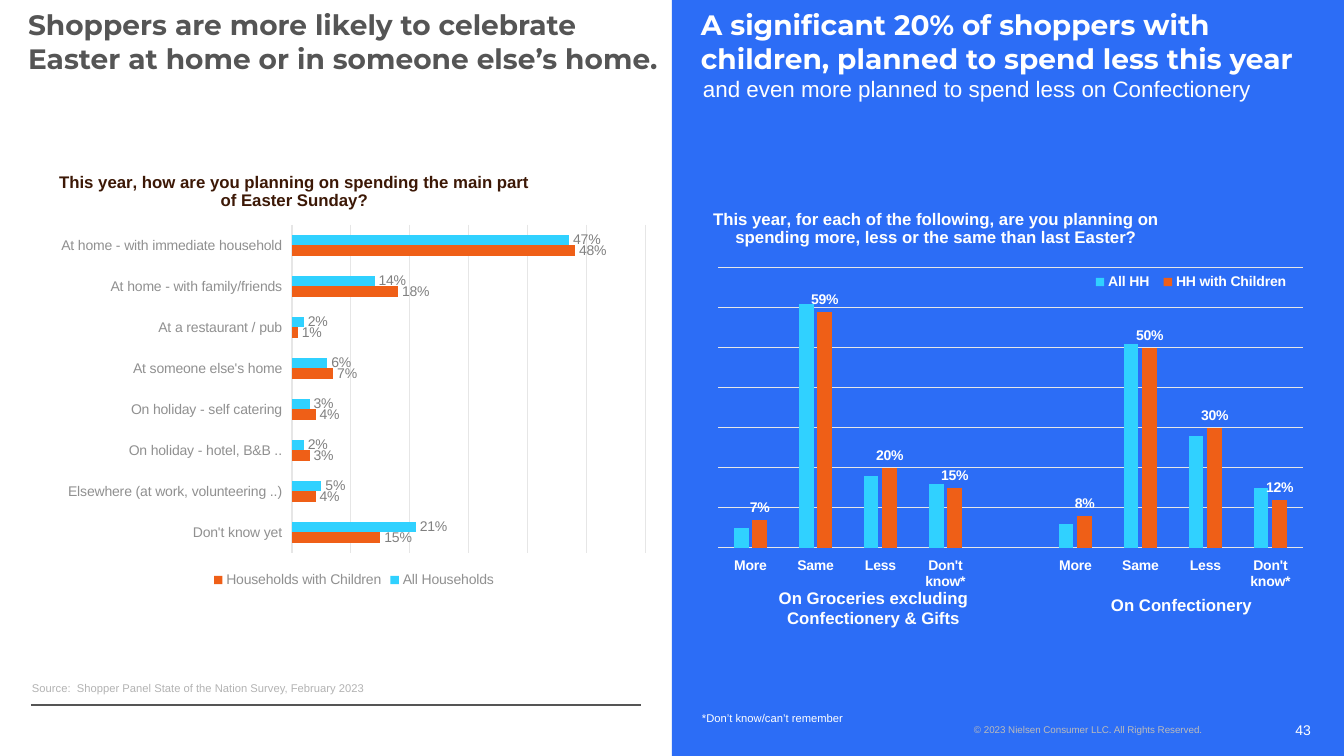
from lxml.etree import SubElement
from pptx import Presentation
from pptx.chart.data import CategoryChartData
from pptx.dml.color import RGBColor
from pptx.enum.chart import XL_CHART_TYPE, XL_LABEL_POSITION, XL_LEGEND_POSITION, XL_TICK_LABEL_POSITION, XL_TICK_MARK
from pptx.enum.shapes import MSO_CONNECTOR, MSO_SHAPE
from pptx.enum.text import MSO_ANCHOR, PP_ALIGN
from pptx.oxml.ns import qn
from pptx.util import Emu, Pt

WIDTH, HEIGHT = 1344, 756
HALF = WIDTH // 2
WHITE, BLUE, GRAY, GRID = "FFFFFF", "2C6DF6", "555555", "E6E6E6"
CYAN, ORANGE = "30D1FF", "EF5F17"


def px(length):
    return Emu(round(length * 914400 / 100.8))


def color(value):
    return RGBColor.from_string(value)


def apply(target, **values):
    for name, value in values.items():
        setattr(target, name, value)


def style_font(font, size, shade, bold=False, name="Arial"):
    apply(font, size=Pt(size), bold=bold, name=name)
    font.color.rgb = color(shade)


def style_line(line, shade, width):
    line.color.rgb = color(shade)
    line.width = Pt(width)


def fill_with(fill, shade):
    fill.solid()
    fill.fore_color.rgb = color(shade)


def place(panel, part):
    return [px(length) for length in (panel[0] + part[0], panel[1] + part[1], part[2], part[3])]


def add_text(slide, panel, part, words, size, shade, bold=False, name="Arial",
             anchor=MSO_ANCHOR.TOP, align=PP_ALIGN.LEFT, wrap=True):
    frame = slide.shapes.add_textbox(*place(panel, part)).text_frame
    apply(frame, word_wrap=wrap, vertical_anchor=anchor, margin_left=0, margin_right=0,
          margin_top=px(5), margin_bottom=px(5))
    paragraph = frame.paragraphs[0]
    apply(paragraph, text=words, alignment=align)
    style_font(paragraph.font, size, shade, bold, name)


def add_headline(slide, panel, part, words, shade):
    add_text(slide, panel, part, words, 20, shade, True, "Montserrat", MSO_ANCHOR.MIDDLE)


def set_layout(element, index, chart_part, part, inner=False):
    for old in element.findall(qn("c:layout")):
        element.remove(old)
    layout = element.makeelement(qn("c:layout"))
    element.insert(index, layout)
    manual = SubElement(layout, qn("c:manualLayout"))
    values = {"layoutTarget": "inner"} if inner else {}
    values.update(xMode="edge", yMode="edge")
    for key, length, whole in zip("xywh", part, chart_part[2:] * 2):
        values[key] = f"{length / whole:.4f}"
    for key, value in values.items():
        SubElement(manual, qn(f"c:{key}")).set("val", value)


def add_survey_chart(slide, panel, part, kind, question, question_shade, categories, series,
                     labelled, shade, label_shade, bold, top, gap, overlap, question_at, plot_part):
    data = CategoryChartData(number_format="0%")
    data.categories = categories
    for name, values in series:
        data.add_series(name, values)
    chart = slide.shapes.add_chart(kind, *place(panel, part), data).chart
    style_font(chart.font, 10, shade, bold)

    chart.chart_title.text_frame.text = question
    style_font(chart.chart_title.text_frame.paragraphs[0].runs[0].font, 12, question_shade, True)
    set_layout(chart.chart_title._element, 1, part, question_at)

    plot = chart.plots[0]
    apply(plot, gap_width=gap, overlap=overlap, vary_by_categories=False)
    for bars, bar_shade in zip(plot.series, (CYAN, ORANGE)):
        fill_with(bars.format.fill, bar_shade)
        bars.invert_if_negative = False
        if bars.name in labelled:
            labels = bars.data_labels
            apply(labels, show_value=True, number_format="0%", number_format_is_linked=False,
                  position=XL_LABEL_POSITION.OUTSIDE_END)
            style_font(labels.font, 10, label_shade, bold)

    apply(chart.value_axis, visible=False, minimum_scale=0, maximum_scale=top, major_unit=0.1,
          has_major_gridlines=True)
    style_line(chart.value_axis.major_gridlines.format.line, GRID, 0.75)
    answers = chart.category_axis
    apply(answers, major_tick_mark=XL_TICK_MARK.NONE, minor_tick_mark=XL_TICK_MARK.NONE,
          tick_label_position=XL_TICK_LABEL_POSITION.LOW)
    style_line(answers.format.line, GRID, 0.75)
    style_font(answers.tick_labels.font, 10, shade, bold)

    chart.has_legend = True
    apply(chart.legend, position=XL_LEGEND_POSITION.BOTTOM, include_in_layout=False)
    style_font(chart.legend.font, 10, shade, bold)
    set_layout(chart._chartSpace.find(".//" + qn("c:plotArea")), 0, part, plot_part, True)
    return chart


def celebration_panel(slide, panel):
    add_headline(slide, panel, (28, 20, 640, 43),
                 "Shoppers are more likely to celebrate Easter at home or in someone else’s home.", GRAY)
    places = ["At home - with immediate household", "At home - with family/friends",
              "At a restaurant / pub", "At someone else's home", "On holiday - self catering",
              "On holiday - hotel, B&B ..", "Elsewhere (at work, volunteering ..)", "Don't know yet"]
    series = [("All Households", (0.47, 0.14, 0.02, 0.06, 0.03, 0.02, 0.05, 0.21)),
              ("Households with Children", (0.48, 0.18, 0.01, 0.07, 0.04, 0.03, 0.04, 0.15))]
    chart = add_survey_chart(
        slide, panel, (49, 156, 610, 436), XL_CHART_TYPE.BAR_CLUSTERED,
        "This year, how are you planning on spending the main part of Easter Sunday?", "3C1806",
        places, series, [name for name, _ in series], "909090", "808080", False,
        top=0.6, gap=182, overlap=0, question_at=(7, 13), plot_part=(243, 69, 354, 328))
    chart.category_axis.reverse_order = True
    add_text(slide, panel, (32, 660, 611, 40),
             "Source:  Shopper Panel State of the Nation Survey, February 2023", 8, "B3B3B3",
             anchor=MSO_ANCHOR.BOTTOM)
    left, top = panel[:2]
    rule = slide.shapes.add_connector(MSO_CONNECTOR.STRAIGHT, px(left + 31), px(top + 705),
                                      px(left + 641), px(top + 705))
    style_line(rule.line, GRAY, 1)
    SubElement(rule._element.spPr, qn("a:effectLst"))


def spending_panel(slide, panel):
    backdrop = slide.shapes.add_shape(MSO_SHAPE.RECTANGLE, *place(panel, (0, 0, *panel[2:])))
    backdrop.shadow.inherit = False
    fill_with(backdrop.fill, BLUE)
    backdrop.line.fill.background()
    add_headline(slide, panel, (29, 20, 612, 43),
                 "A significant 20% of shoppers with children, planned to spend less this year", WHITE)
    add_text(slide, panel, (31, 70, 615, 48),
             "and even more planned to spend less on Confectionery", 16, WHITE)
    plans = ["More", "Same", "Less", "Don't know*"]
    series = [("All HH", (0.05, 0.61, 0.18, 0.16, None, 0.06, 0.51, 0.28, 0.15)),
              ("HH with Children", (0.07, 0.59, 0.2, 0.15, None, 0.08, 0.5, 0.3, 0.12))]
    chart_part = (34, 201, 610, 422)
    chart = add_survey_chart(
        slide, panel, chart_part, XL_CHART_TYPE.COLUMN_CLUSTERED,
        "This year, for each of the following, are you planning on spending more, less or the same "
        "than last Easter?", WHITE, plans + [" "] + plans, series, ["HH with Children"],
        WHITE, WHITE, True, top=0.7, gap=219, overlap=-27, question_at=(4, 5),
        plot_part=(12, 67, 585, 280))
    set_layout(chart.legend._element, 1, chart_part, (380, 71, 210, 20))
    for part, caption in (((102, 583, 199, 50), "On Groceries excluding Confectionery & Gifts"),
                          ((410, 590, 199, 30), "On Confectionery")):
        add_text(slide, panel, part, caption, 12, WHITE, True, align=PP_ALIGN.CENTER)
    add_text(slide, panel, (30, 706, 142, 30), "*Don’t know/can’t remember", 8, WHITE, wrap=False)
    add_text(slide, panel, (302, 719, 286, 22),
             "© 2023 Nielsen Consumer LLC. All Rights Reserved.", 7, "BBBBBB")
    add_text(slide, panel, (539, 710, 100, 40), "43", 10, WHITE,
             anchor=MSO_ANCHOR.MIDDLE, align=PP_ALIGN.RIGHT)


def main():
    presentation = Presentation()
    apply(presentation, slide_width=px(WIDTH), slide_height=px(HEIGHT))
    slide = presentation.slides.add_slide(presentation.slide_layouts[6])
    celebration_panel(slide, (0, 0, HALF, HEIGHT))
    spending_panel(slide, (HALF, 0, HALF, HEIGHT))
    presentation.save("out.pptx")


if __name__ == "__main__":
    main()
